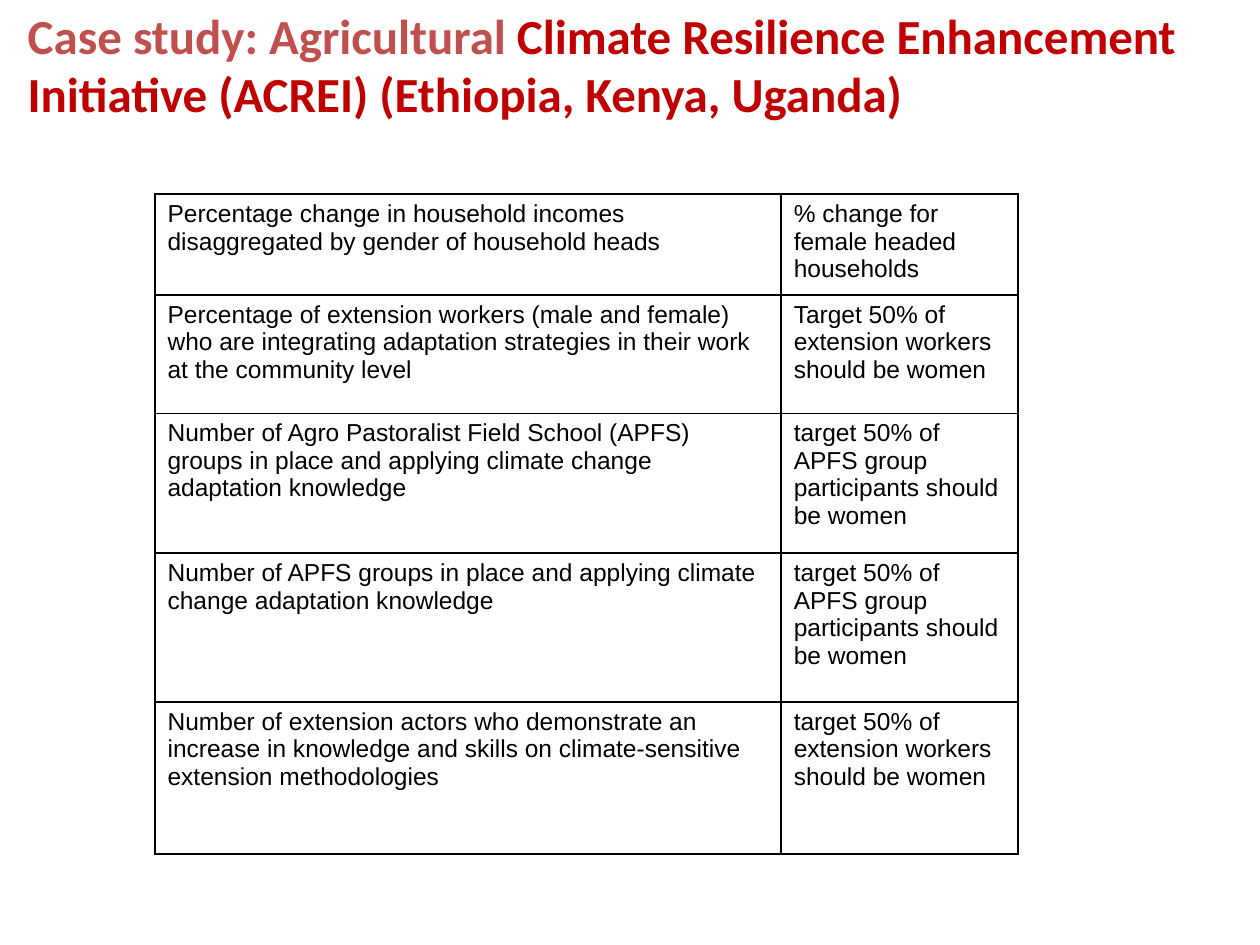
import pptx
import pptx.util
import pptx.dml.color
import pptx.enum.text
import pptx.oxml
import pptx.oxml.ns

Inches = pptx.util.Inches
COLORS = {"rose": "C0504D", "red": "C00000", "black": "000000"}


class Deck:
    """Holds the style and the current slide."""
    head = "Calibri"
    body = "Arial"

    def __init__(self):
        self.prs = pptx.Presentation()
        self.prs.slide_width = Inches(10)
        self.prs.slide_height = Inches(7.5)
        self.slide = self.prs.slides.add_slide(self.prs.slide_layouts[5])

    def paint(self, font, color):
        font.color.rgb = pptx.dml.color.RGBColor.from_string(COLORS[color])

    def title(self, box, parts):
        shape = self.slide.shapes.title
        shape.left, shape.top, shape.width, shape.height = map(Inches, box)
        frame = shape.text_frame
        frame.auto_size = pptx.enum.text.MSO_AUTO_SIZE.NONE
        frame.word_wrap = True
        frame.vertical_anchor = pptx.enum.text.MSO_ANCHOR.TOP
        frame.margin_left = frame.margin_right = 0
        frame.margin_top = frame.margin_bottom = 0
        para = frame.paragraphs[0]
        para.alignment = pptx.enum.text.PP_ALIGN.LEFT
        para.font.name, para.font.size = self.head, pptx.util.Pt(28)
        para.font.bold = True
        for text, color in parts:
            run = para.add_run()
            run.text = text
            self.paint(run.font, color)

    def border(self, cell):
        props = cell._tc.get_or_add_tcPr()
        for i, side in enumerate(("lnL", "lnR", "lnT", "lnB")):
            props.insert(i, pptx.oxml.parse_xml(
                f'<a:{side} {pptx.oxml.ns.nsdecls("a")} w="12700"><a:solidFill>'
                f'<a:srgbClr val="{COLORS["black"]}"/></a:solidFill></a:{side}>'))

    def table(self, left, top, widths, heights, rows):
        grid = self.slide.shapes.add_table(
            len(rows), len(widths), Inches(left), Inches(top),
            Inches(sum(widths)), Inches(sum(heights))).table
        grid.first_row = grid.horz_banding = False
        for col, width in zip(grid.columns, widths):
            col.width = Inches(width)
        for row, height, texts in zip(grid.rows, heights, rows):
            row.height = Inches(height)
            for cell, text in zip(row.cells, texts):
                cell.text = text
                cell.fill.background()
                self.border(cell)
                font = cell.text_frame.paragraphs[0].font
                font.name, font.size = self.body, pptx.util.Pt(14)
                self.paint(font, "black")


def main():
    deck = Deck()

    # Title in two colours
    deck.title((0.22, 0.04, 9.78, 1.36), [
        ("Case study: Agricultural ", "rose"),
        ("Climate Resilience Enhancement Initiative (ACREI) "
         "(Ethiopia, Kenya, Uganda)", "red"),
    ])

    # Indicators and their gender targets
    staff = "extension workers should be women"
    group = "target 50% of APFS group participants should be women"
    deck.table(1.23, 1.54, [4.97, 1.88], [0.8, 0.94, 1.11, 1.18, 1.21], [
        ("Percentage change in household incomes disaggregated by gender "
         "of household heads", "% change for female headed households"),
        ("Percentage of extension workers (male and female) who are "
         "integrating adaptation strategies in their work at the community "
         "level", f"Target 50% of {staff}"),
        ("Number of Agro Pastoralist Field School (APFS) groups in place and "
         "applying climate change adaptation knowledge", group),
        ("Number of APFS groups in place and applying climate change "
         "adaptation knowledge", group),
        ("Number of extension actors who demonstrate an increase in knowledge "
         "and skills on climate-sensitive extension methodologies",
         f"target 50% of {staff}"),
    ])

    deck.prs.save("out.pptx")


if __name__ == "__main__":
    main()
